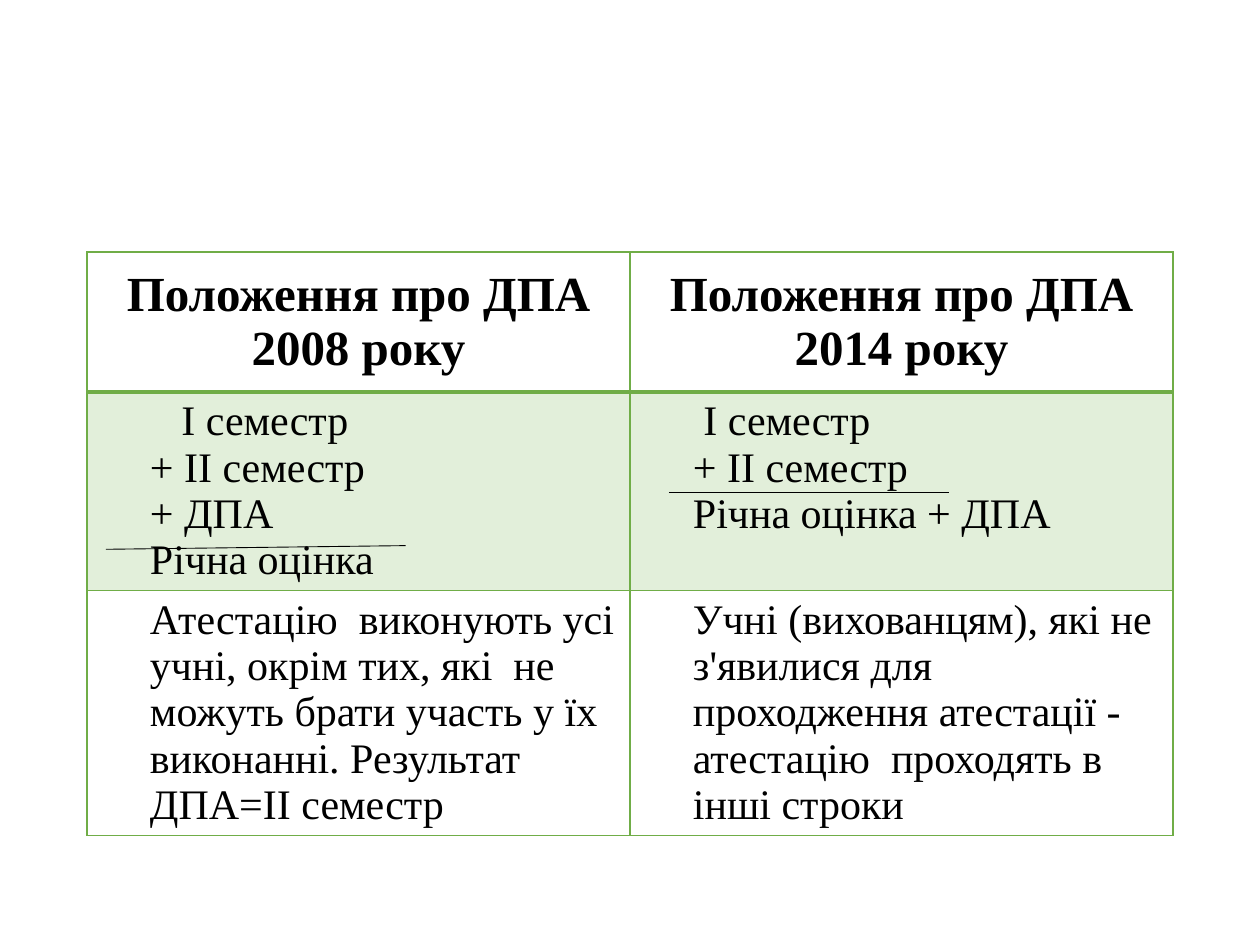
import pptx
import pptx.dml.color
import pptx.enum.dml
import pptx.enum.shapes
import pptx.enum.text
import pptx.oxml
import pptx.oxml.ns
import pptx.util

Pt = pptx.util.Pt

HEADINGS = ["Положення про ДПА 2008 року", "Положення про ДПА 2014 року"]
FORMULAS = [
    ["І семестр", "+ ІІ семестр", "+ ДПА", "Річна оцінка"],
    ["І семестр", "+ ІІ семестр", "Річна оцінка + ДПА"],
]
RULES = [
    ["Атестацію  виконують усі учні, окрім тих, які  не можуть брати участь "
     "у їх виконанні. Результат ДПА=ІІ семестр"],
    ["Учні (вихованцям), які не з'явилися для проходження атестації -  "
     "атестацію  проходять в інші строки"],
]
SUM_LINES = [((60.5, 313.9), (231.8, 311.8)), ((382.3, 281.5), (542.2, 281.5))]

FONT = "Times New Roman"
GREEN, PALE_GREEN, BLACK = "70AD47", "E2EFDA", "000000"
TABLE_LEFT, TABLE_TOP = 49.7, 144
COLUMN_WIDTH = 310.3
ROW_HEIGHTS = [80, 113, 140]
TEXT_INDENT = 28.8
FIRST_TERM_INDENTS = [18, 6]


def color(value):
    return pptx.dml.color.RGBColor.from_string(value)


def set_borders(cell, bottom_width):
    properties = cell._tc.get_or_add_tcPr()
    for side, width in (("L", 1), ("R", 1), ("T", 1), ("B", bottom_width)):
        properties.append(pptx.oxml.parse_xml(
            f'<a:ln{side} {pptx.oxml.ns.nsdecls("a")} w="{Pt(width)}">'
            f'<a:solidFill><a:srgbClr val="{GREEN}"/></a:solidFill></a:ln{side}>'))


def fill_cell(cell, lines, size, bold=False, background=None, bottom_width=1):
    set_borders(cell, bottom_width)
    if background:
        cell.fill.solid()
        cell.fill.fore_color.rgb = color(background)
    else:
        cell.fill.background()
    cell.text_frame.text = "\n".join(lines)
    for paragraph in cell.text_frame.paragraphs:
        for run in paragraph.runs:
            run.font.name = FONT
            run.font.size = Pt(size)
            run.font.bold = bold
            run.font.color.rgb = color(BLACK)


def indent(cell, first_line=0):
    for number, paragraph in enumerate(cell.text_frame.paragraphs):
        properties = paragraph._p.get_or_add_pPr()
        properties.set("marL", str(Pt(TEXT_INDENT)))
        properties.set("indent", str(Pt(0 if number else first_line)))


def add_comparison(slide):
    table = slide.shapes.add_table(
        len(ROW_HEIGHTS), len(HEADINGS), Pt(TABLE_LEFT), Pt(TABLE_TOP),
        Pt(COLUMN_WIDTH * len(HEADINGS)), Pt(sum(ROW_HEIGHTS))).table
    table.horz_banding = False
    for row, height in zip(table.rows, ROW_HEIGHTS):
        row.height = Pt(height)
    for index, heading in enumerate(HEADINGS):
        table.columns[index].width = Pt(COLUMN_WIDTH)
        heading_cell, formula_cell, rule_cell = (
            table.cell(row, index) for row in range(len(ROW_HEIGHTS)))
        fill_cell(heading_cell, [heading], 28, bold=True, bottom_width=2)
        heading_cell.vertical_anchor = pptx.enum.text.MSO_ANCHOR.MIDDLE
        heading_cell.text_frame.paragraphs[0].alignment = pptx.enum.text.PP_ALIGN.CENTER
        fill_cell(formula_cell, FORMULAS[index], 24, background=PALE_GREEN)
        indent(formula_cell, FIRST_TERM_INDENTS[index])
        fill_cell(rule_cell, RULES[index], 24)
        indent(rule_cell)


def add_sum_line(slide, start, end):
    sum_line = slide.shapes.add_connector(
        pptx.enum.shapes.MSO_CONNECTOR.STRAIGHT, *map(Pt, start + end))
    sum_line.line.color.rgb = color(BLACK)
    sum_line.line.width = Pt(0.5)
    sum_line._element.spPr.append(pptx.oxml.parse_xml(
        f'<a:effectLst {pptx.oxml.ns.nsdecls("a")}/>'))


def main():
    deck = pptx.Presentation()
    deck.slide_width, deck.slide_height = Pt(720), Pt(540)
    slide = deck.slides.add_slide(deck.slide_layouts[6])
    add_comparison(slide)
    for start, end in SUM_LINES:
        add_sum_line(slide, start, end)
    deck.save("out.pptx")


if __name__ == "__main__":
    main()
